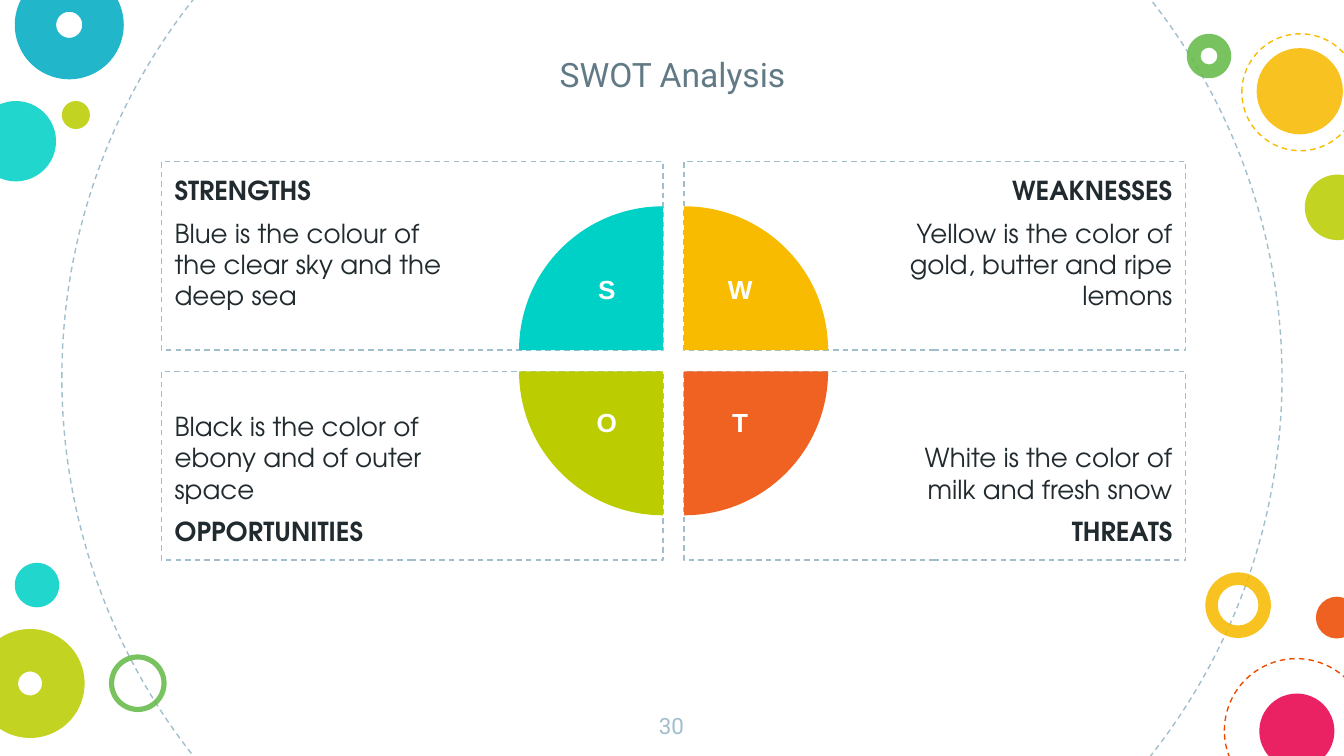
from lxml import etree
from pptx import Presentation
from pptx import util as u
from pptx.dml.color import RGBColor
from pptx.enum import dml, shapes, text
from pptx.oxml.ns import qn

COLORS = {
    "teal": "00D1C6", "blue": "00ACC3", "lime": "BBCD00", "green": "65BB48",
    "yellow": "F8BB00", "orange": "ED4A00", "coral": "EF6222", "pink": "E8004C",
    "mist": "A1BECC", "slate": "617A86", "ink": "212A2E", "white": "FFFFFF",
}
KIND = shapes.MSO_SHAPE
LEFT, CENTER, RIGHT = text.PP_ALIGN.LEFT, text.PP_ALIGN.CENTER, text.PP_ALIGN.RIGHT
TOP, BOTTOM = text.MSO_ANCHOR.TOP, text.MSO_ANCHOR.BOTTOM

# left, top, diameter, colour, ring thickness as a share of the diameter (0 = solid)
BUBBLES = [
    (-0.46, 1.91, 1.52, "teal", 0),
    (22.78, 10.82, 1.24, "yellow", 0.19),
    (0.28, -0.56, 2.06, "blue", 0.38),
    (1.17, 1.91, 0.53, "lime", 0),
    (2.06, 12.37, 1.09, "green", 0.09),
    (24.87, 11.28, 0.79, "orange", 0),
    (-0.46, 11.89, 2.06, "lime", 0.39),
    (23.8, 13.11, 1.42, "pink", 0),
    (22.43, 0.64, 0.84, "green", 0.31),
    (23.75, 0.91, 1.63, "yellow", 0),
    (24.66, 3.3, 1.24, "lime", 0),
    (0.28, 10.64, 0.84, "teal", 0),
]
ORBITS = [
    (1.17, -4.39, 23.06, "mist"),
    (23.14, 12.45, 2.72, "orange"),
    (23.47, 0.64, 2.21, "yellow"),
]
# column, row, letter, colour, pie rotation, heading, description
QUADRANTS = [
    (0, 0, "S", "teal", 0, "STRENGTHS",
     "Blue is the colour of the clear sky and the deep sea"),
    (1, 0, "W", "yellow", 90, "WEAKNESSES",
     "Yellow is the color of gold, butter and ripe lemons"),
    (0, 1, "O", "lime", 270, "OPPORTUNITIES",
     "Black is the color of ebony and of outer space"),
    (1, 1, "T", "coral", 180, "THREATS",
     "White is the color of milk and fresh snow"),
]
GRID_LEFT, GRID_TOP, GAP = 3.05, 3.05, 0.4
PANEL_W, PANEL_H = 9.48, 3.57
PIE_RADIUS, LETTER_OFFSET = 2.72, 1.06
LETTER_W, LETTER_H = 1.3, 1.04
PAD, PIE_PAD = 0.25, 3.81


class SlideBuilder:
    body_font, title_font, letter_font = "TeX Gyre Adventor", "Roboto", "Arial"

    def __init__(self, slide):
        self.slide = slide

    @staticmethod
    def color(name):
        return RGBColor.from_string(COLORS[name])

    def shape(self, kind, left, top, width, height, fill=None, dash=None):
        item = self.slide.shapes.add_shape(
            kind, u.Cm(left), u.Cm(top), u.Cm(width), u.Cm(height))
        item.shadow.inherit = False
        if fill:
            item.fill.solid()
            item.fill.fore_color.rgb = self.color(fill)
        else:
            item.fill.background()
        if dash:
            item.line.color.rgb = self.color(dash)
            item.line.width = u.Pt(0.75)
            item.line.dash_style = dml.MSO_LINE.DASH
        else:
            item.line.fill.background()
        return item

    def bubble(self, left, top, size, color, ring):
        """Add a slightly transparent disc or ring."""
        kind = KIND.DONUT if ring else KIND.OVAL
        item = self.shape(kind, left, top, size, size, fill=color)
        if ring:
            item.adjustments[0] = ring
        tint = item.fill._xPr.find(".//" + qn("a:srgbClr"))
        etree.SubElement(tint, qn("a:alpha"), val="87000")

    def orbit(self, left, top, size, color):
        self.shape(KIND.OVAL, left, top, size, size, dash=color)

    def pie(self, center_x, center_y, color, rotation):
        size = 2 * PIE_RADIUS
        item = self.shape(KIND.PIE, center_x - PIE_RADIUS, center_y - PIE_RADIUS,
                          size, size, fill=color)
        item.adjustments[0], item.adjustments[1] = 108, 162
        item.rotation = rotation

    def frame(self, holder, anchor, left, top, right, bottom):
        """Set wrapping, anchor and insets; return the text frame."""
        body = holder.text_frame
        body.word_wrap = True
        body.vertical_anchor = anchor
        body.margin_left, body.margin_top = u.Cm(left), u.Cm(top)
        body.margin_right, body.margin_bottom = u.Cm(right), u.Cm(bottom)
        return body

    def run(self, paragraph, words, font, size, color, align=CENTER, bold=False):
        paragraph.alignment = align
        run = paragraph.add_run()
        run.text = words
        run.font.name, run.font.size, run.font.bold = font, u.Pt(size), bold
        run.font.color.rgb = self.color(color)

    def title(self, words):
        title = self.slide.shapes.title
        title.left, title.top = u.Cm(5.38), u.Cm(0.25)
        title.width, title.height = u.Cm(14.66), u.Cm(1.78)
        body = self.frame(title, BOTTOM, PAD, PAD, PAD, PAD)
        self.run(body.paragraphs[0], words, self.title_font, 18, "slate")

    def label(self, words, left, top, width, height, inset, **style):
        box = self.slide.shapes.add_textbox(
            u.Cm(left), u.Cm(top), u.Cm(width), u.Cm(height))
        body = self.frame(box, TOP, *inset)
        self.run(body.paragraphs[0], words, **style)

    def letter(self, words, center_x, center_y):
        self.label(words, center_x - LETTER_W / 2, center_y - LETTER_H / 2,
                   LETTER_W, LETTER_H, (0.25, 0.13, 0.25, 0.13),
                   font=self.letter_font, size=14, color="white", bold=True)

    def panel(self, column, row, heading, description):
        """Add a dashed box with its heading on the outer edge of the grid."""
        box = self.shape(KIND.RECTANGLE, GRID_LEFT + column * (PANEL_W + GAP),
                         GRID_TOP + row * (PANEL_H + GAP), PANEL_W, PANEL_H,
                         dash="mist")
        left, right = (PIE_PAD, PAD) if column else (PAD, PIE_PAD)
        body = self.frame(box, BOTTOM if row else TOP, left, PAD, right, PAD)
        first, second = body.paragraphs[0], body.add_paragraph()
        second.space_before = second.space_after = u.Pt(6)
        head, detail = (second, first) if row else (first, second)
        align = RIGHT if column else LEFT
        self.run(head, heading, self.body_font, 14, "ink", align, bold=True)
        self.run(detail, description, self.body_font, 14, "ink", align)


def main():
    deck = Presentation()
    deck.slide_width, deck.slide_height = u.Cm(25.4), u.Cm(14.29)
    builder = SlideBuilder(deck.slides.add_slide(deck.slide_layouts[5]))

    for orbit in ORBITS:
        builder.orbit(*orbit)
    for bubble in BUBBLES:
        builder.bubble(*bubble)
    builder.title("SWOT Analysis")
    builder.label("30", 12.04, 13.21, 1.3, 1.08, (PAD,) * 4,
                  font=builder.title_font, size=12, color="mist")

    for column, row, _, _, _, heading, description in QUADRANTS:
        builder.panel(column, row, heading, description)
    for column, row, letter, color, rotation, _, _ in QUADRANTS:
        corner_x = GRID_LEFT + PANEL_W + column * GAP
        corner_y = GRID_TOP + PANEL_H + row * GAP
        builder.pie(corner_x, corner_y, color, rotation)
        builder.letter(letter, corner_x + (2 * column - 1) * LETTER_OFFSET,
                       corner_y + (2 * row - 1) * LETTER_OFFSET)
    deck.save("out.pptx")


if __name__ == "__main__":
    main()
